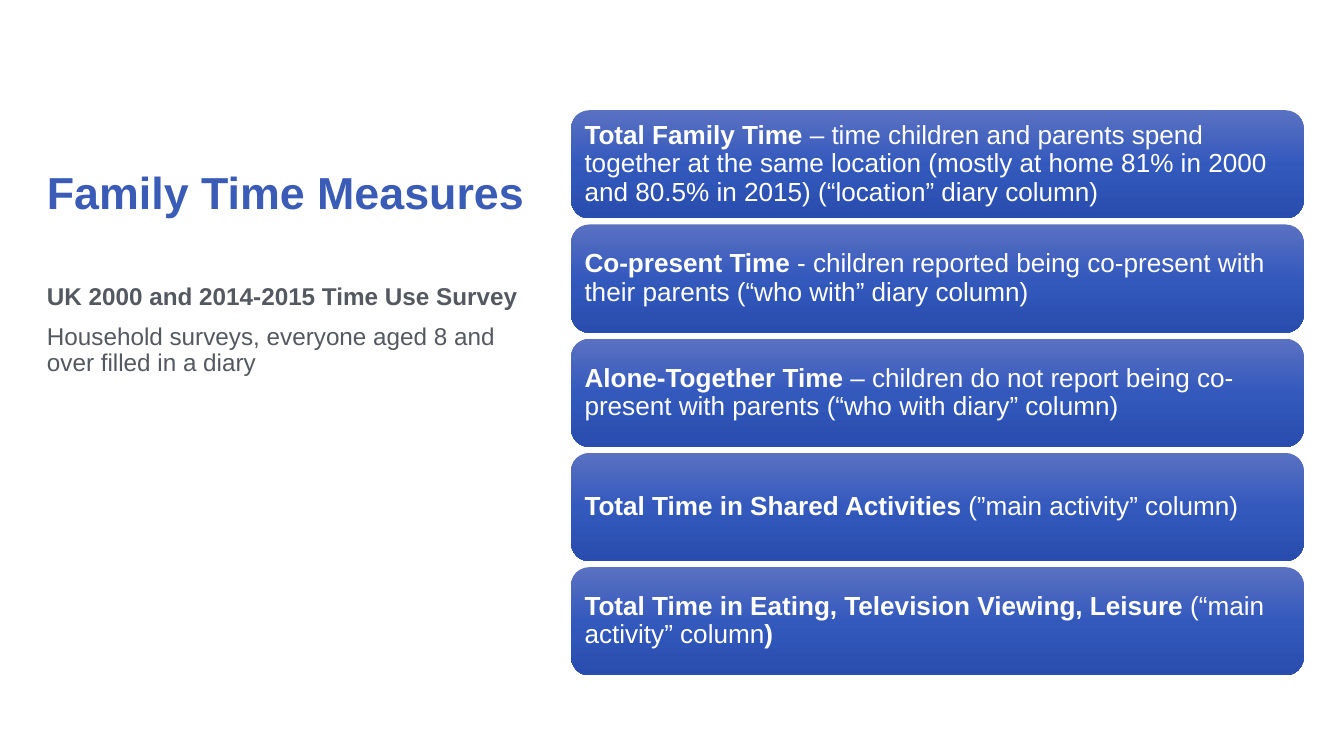
from dataclasses import dataclass

import pptx
import pptx.dml.color
import pptx.enum.shapes
import pptx.enum.text
import pptx.oxml.ns
import pptx.util
from lxml import etree

Inches = pptx.util.Inches
qn = pptx.oxml.ns.qn
ANCHOR = pptx.enum.text.MSO_ANCHOR


@dataclass(frozen=True)
class Theme:
    font: str = "Arial"
    title: str = "3A5CB7"
    body: str = "545860"
    card_text: str = "FFFFFF"
    card_stops: tuple = ((0, "5A71C1"), (50, "3459BD"), (100, "284DAE"))
    title_size: int = 48
    body_size: int = 26
    card_size: int = 28


THEME = Theme()

MEASURES = [
    [("Total Family Time ", True),
     ("– time children and parents spend together at the same location "
      "(mostly at home 81% in 2000 and 80.5% in 2015) (“location” diary column)", False)],
    [("Co-present Time ", True),
     ("- children reported being co-present with their parents\u00a0"
      "(“who with” diary column)", False)],
    [("Alone-Together Time ", True),
     ("– children do not report being co-present with parents "
      "(“who with diary” column)", False)],
    [("Total Time in Shared Activities", True), (" (”main activity” column)", False)],
    [("Total Time in Eating, Television Viewing, Leisure ", True),
     ("(“main activity” column", False), (")", True)],
]


def write_paragraph(p, runs, size, color):
    p.alignment = pptx.enum.text.PP_ALIGN.LEFT
    p.line_spacing = 0.9
    for text, bold in runs:
        r = p.add_run()
        r.text = text
        r.font.name = THEME.font
        r.font.size = pptx.util.Pt(size)
        r.font.bold = bold
        r.font.color.rgb = pptx.dml.color.RGBColor.from_string(color)


def add_text(s, left, top, width, height, paragraphs, size, color, anchor=ANCHOR.TOP):
    tf = s.shapes.add_textbox(Inches(left), Inches(top), Inches(width), Inches(height)).text_frame
    tf.word_wrap = True
    tf.vertical_anchor = anchor
    for i, runs in enumerate(paragraphs):
        p = tf.add_paragraph() if i else tf.paragraphs[0]
        write_paragraph(p, runs, size, color)
        if i:
            p.space_before = pptx.util.Pt(15)


def fill_gradient(shape, stops):
    shape.fill.gradient()
    shape.fill.gradient_angle = 270
    gs_list = shape._element.spPr.find(".//" + qn("a:gsLst"))
    for gs in list(gs_list):
        gs_list.remove(gs)
    for percent, color in stops:
        gs = etree.SubElement(gs_list, qn("a:gs"), pos=str(percent * 1000))
        etree.SubElement(gs, qn("a:srgbClr"), val=color)


def add_card(s, left, top, width, height, runs):
    card = s.shapes.add_shape(pptx.enum.shapes.MSO_SHAPE.ROUNDED_RECTANGLE,
                              Inches(left), Inches(top), Inches(width), Inches(height))
    card.shadow.inherit = False
    card.line.fill.background()
    fill_gradient(card, THEME.card_stops)
    tf = card.text_frame
    tf.word_wrap = True
    tf.vertical_anchor = ANCHOR.MIDDLE
    tf.margin_left = tf.margin_right = tf.margin_top = tf.margin_bottom = Inches(0.12)
    write_paragraph(tf.paragraphs[0], runs, THEME.card_size, THEME.card_text)


def main():
    prs = pptx.Presentation()
    prs.slide_width, prs.slide_height = Inches(20), Inches(11.25)
    s = prs.slides.add_slide(prs.slide_layouts[6])

    add_text(s, 0.6, 1.59, 7.7, 1.72, [[("Family Time Measures", True)]],
             THEME.title_size, THEME.title, ANCHOR.BOTTOM)
    add_text(s, 0.6, 4.18, 7.23, 5.92,
             [[("UK 2000 and 2014-2015 Time Use Survey", True)],
              [("Household surveys, everyone aged 8 and over filled in a diary", False)]],
             THEME.body_size, THEME.body)

    for i, runs in enumerate(MEASURES):
        add_card(s, 8.5, 1.64 + 1.7 * i, 10.9, 1.61, runs)

    prs.save("out.pptx")


if __name__ == "__main__":
    main()
